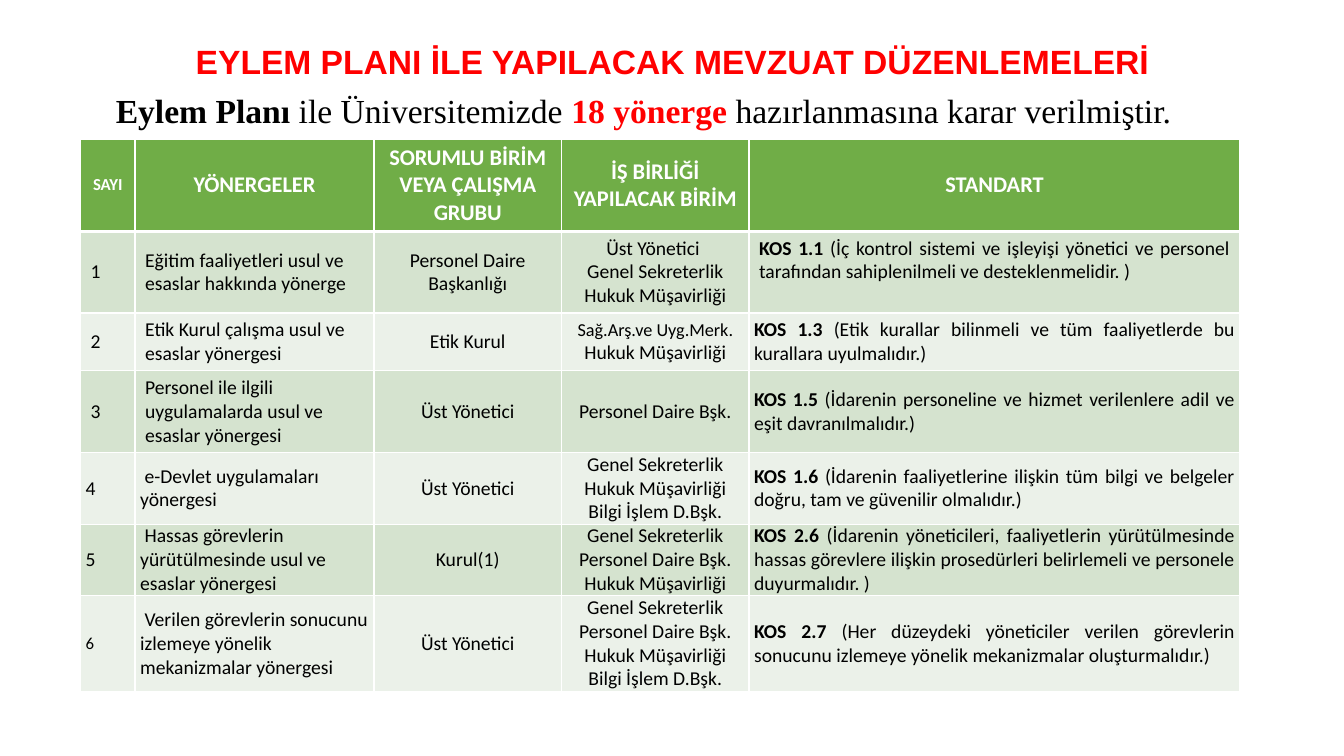
"""Build the slide listing the directives planned under the action plan."""
import dataclasses

import pptx
import pptx.dml.color
import pptx.enum.text
import pptx.oxml
import pptx.oxml.ns
import pptx.util

Inches = pptx.util.Inches
Pt = pptx.util.Pt
RGB = pptx.dml.color.RGBColor.from_string
ALIGN = pptx.enum.text.PP_ALIGN
MIDDLE = pptx.enum.text.MSO_ANCHOR.MIDDLE
TOP = pptx.enum.text.MSO_ANCHOR.TOP
AUTO_SIZE = pptx.enum.text.MSO_AUTO_SIZE


@dataclasses.dataclass(frozen=True)
class Theme:
    title_font: str = "Arial"
    lead_font: str = "Times New Roman"
    table_font: str = "Calibri"
    title_size: int = 24
    header_size: int = 16
    body_size: int = 14
    compact_size: int = 13
    small_size: int = 12
    accent: str = "FF0000"
    ink: str = "000000"
    white: str = "FFFFFF"
    header_fill: str = "70AD47"
    bands: tuple = ("D5E3CF", "EBF1E9")


THEME = Theme()
COLUMN_WIDTHS = (0.54, 2.37, 1.86, 1.86, 4.87)
ROW_HEIGHTS = (0.82, 0.53, 0.34, 0.51, 0.4, 0.39, 0.62)
COLUMN_ALIGNS = (ALIGN.JUSTIFY, ALIGN.LEFT, ALIGN.CENTER, ALIGN.CENTER, ALIGN.JUSTIFY)
HEADERS = ("SAYI", "YÖNERGELER", "SORUMLU BİRİM VEYA ÇALIŞMA GRUBU",
           "İŞ BİRLİĞİ YAPILACAK BİRİM", "STANDART")
SECRETARY = "Genel Sekreterlik"
LEGAL = "Hukuk Müşavirliği"
STAFF = "Personel Daire Bşk."
IT = "Bilgi İşlem D.Bşk."
MANAGER = "Üst Yönetici"
DIRECTIVES = (
    ("Eğitim faaliyetleri usul ve esaslar hakkında yönerge", "Personel Daire Başkanlığı",
     ("Üst Yönetici ", SECRETARY, LEGAL), "KOS 1.1",
     "(İç kontrol sistemi ve işleyişi yönetici ve personel tarafından sahiplenilmeli "
     "ve desteklenmelidir. )"),
    ("Etik Kurul çalışma usul ve esaslar yönergesi", "Etik Kurul",
     ([("Sağ.Arş.ve Uyg.Merk.", {"size": THEME.compact_size})], LEGAL), "KOS 1.3",
     "(Etik kurallar bilinmeli ve tüm faaliyetlerde bu kurallara uyulmalıdır.)"),
    ("Personel ile ilgili uygulamalarda usul ve esaslar yönergesi", MANAGER,
     (STAFF,), "KOS 1.5",
     "(İdarenin personeline ve hizmet verilenlere adil ve eşit davranılmalıdır.)"),
    (" e-Devlet uygulamaları yönergesi", MANAGER,
     (SECRETARY, LEGAL, IT), "KOS 1.6",
     "(İdarenin faaliyetlerine ilişkin tüm bilgi ve belgeler doğru, tam ve güvenilir "
     "olmalıdır.)"),
    (" Hassas görevlerin yürütülmesinde usul ve esaslar yönergesi", "Kurul(1)",
     (SECRETARY, STAFF, LEGAL), "KOS 2.6",
     "(İdarenin yöneticileri, faaliyetlerin yürütülmesinde hassas görevlere ilişkin "
     "prosedürleri belirlemeli ve personele duyurmalıdır. )"),
    (" Verilen görevlerin sonucunu izlemeye yönelik mekanizmalar yönergesi", MANAGER,
     (SECRETARY, STAFF, LEGAL, IT), "KOS 2.7",
     "(Her düzeydeki yöneticiler verilen görevlerin sonucunu izlemeye yönelik "
     "mekanizmalar oluşturmalıdır.)"),
)


def write(frame, paragraphs, align=ALIGN.LEFT, line_spacing=None, space_before=None, **base):
    """Fill a text frame; a paragraph is a string or a list of (text, format) runs."""
    for index, content in enumerate(paragraphs):
        paragraph = frame.add_paragraph() if index else frame.paragraphs[0]
        paragraph.alignment = align
        paragraph.line_spacing = line_spacing
        paragraph.space_before = space_before
        for text, changes in [(content, {})] if isinstance(content, str) else content:
            style = {"bold": False, "color": THEME.ink, **base, **changes}
            run = paragraph.add_run()
            run.text = text
            run.font.name = style["font"]
            run.font.size = Pt(style["size"])
            run.font.bold = style["bold"]
            run.font.color.rgb = RGB(style["color"])


class SlideBuilder:
    """Hold the theme and the current slide."""

    def __init__(self, theme, slide):
        self.theme = theme
        self.slide = slide

    def title(self, text, left, top, width, height):
        """Place and format the title placeholder."""
        title = self.slide.shapes.title
        title.left, title.top = Inches(left), Inches(top)
        title.width, title.height = Inches(width), Inches(height)
        title.text_frame.auto_size = AUTO_SIZE.NONE
        title.text_frame.vertical_anchor = MIDDLE
        write(title.text_frame, [text], align=ALIGN.CENTER, line_spacing=0.9,
              font=self.theme.title_font, size=self.theme.title_size,
              color=self.theme.accent, bold=True)

    def lead(self, runs, left, top, width, height):
        """Add the indented sentence above the table."""
        box = self.slide.shapes.add_textbox(Inches(left), Inches(top), Inches(width), Inches(height))
        frame = box.text_frame
        frame.word_wrap = True
        frame.auto_size = AUTO_SIZE.SHAPE_TO_FIT_TEXT
        write(frame, [runs], align=ALIGN.JUSTIFY, line_spacing=0.9, space_before=Pt(10),
              font=self.theme.lead_font, size=self.theme.title_size)
        properties = frame.paragraphs[0]._p.get_or_add_pPr()
        properties.set("marL", str(Inches(0.25)))
        properties.set("indent", "0")

    def borders(self, cell, top=1, bottom=1):
        """Draw the white rules around a cell, with widths in points."""
        properties = cell._tc.get_or_add_tcPr()
        sides = (("lnL", 1), ("lnR", 1), ("lnT", top), ("lnB", bottom))
        for position, (side, points) in enumerate(sides):
            properties.insert(position, pptx.oxml.parse_xml(
                f'<a:{side} {pptx.oxml.ns.nsdecls("a")} w="{Pt(points)}"><a:solidFill>'
                f'<a:srgbClr val="{self.theme.white}"/></a:solidFill></a:{side}>'))

    def cell(self, cell, paragraphs, fill, tight=False, anchor=MIDDLE, top=1, bottom=1, **style):
        """Fill, rule and write one table cell."""
        cell.fill.solid()
        cell.fill.fore_color.rgb = RGB(fill)
        cell.vertical_anchor = anchor
        if tight:
            cell.margin_left = cell.margin_right = Inches(0.05)
            cell.margin_top = cell.margin_bottom = 0
        self.borders(cell, top, bottom)
        write(cell.text_frame, paragraphs, font=self.theme.table_font, **style)

    def directives(self, left, top, width, height):
        """Add the table of directives."""
        theme = self.theme
        frame = self.slide.shapes.add_table(len(ROW_HEIGHTS), len(COLUMN_WIDTHS), Inches(left),
                                            Inches(top), Inches(width), Inches(height))
        table = frame.table
        for column, column_width in zip(table.columns, COLUMN_WIDTHS):
            column.width = Inches(column_width)
        for row, row_height in zip(table.rows, ROW_HEIGHTS):
            row.height = Inches(row_height)
        frame.width, frame.height = Inches(width), Inches(height)
        for column, header in enumerate(HEADERS):
            self.cell(table.cell(0, column), [header], theme.header_fill, bottom=3,
                      align=ALIGN.CENTER, color=theme.white, bold=True,
                      size=theme.header_size if column else theme.small_size)
        for number, (directive, unit, partners, code, standard) in enumerate(DIRECTIVES, 1):
            contents = ([str(number)], [directive], [unit], partners,
                        [[(code + " ", {"bold": True}), (standard, {})]])
            for column, paragraphs in enumerate(contents):
                last_number = column == 0 and number == len(DIRECTIVES)
                self.cell(table.cell(number, column), paragraphs, theme.bands[(number - 1) % 2],
                          tight=number > 3 or (number > 1 and column > 1),
                          anchor=TOP if number == 1 and column == 4 else MIDDLE,
                          top=3 if number == 1 else 1, align=COLUMN_ALIGNS[column],
                          size=theme.small_size if last_number else theme.body_size)


def main():
    """Build and save the presentation."""
    deck = pptx.Presentation()
    deck.slide_width, deck.slide_height = Inches(13.33), Inches(7.5)
    builder = SlideBuilder(THEME, deck.slides.add_slide(deck.slide_layouts[5]))
    builder.title("EYLEM PLANI İLE YAPILACAK MEVZUAT DÜZENLEMELERİ", 0.92, 0.4, 11.5, 0.46)
    builder.directives(0.8, 1.38, 11.5, 5.4)
    builder.lead([("Eylem Planı ", {"bold": True}), ("ile Üniversitemizde ", {}),
                  ("18 yönerge ", {"bold": True, "color": THEME.accent}),
                  ("hazırlanmasına karar verilmiştir.", {})], 0.8, 0.89, 11.5, 0.46)
    deck.save("out.pptx")


if __name__ == "__main__":
    main()
